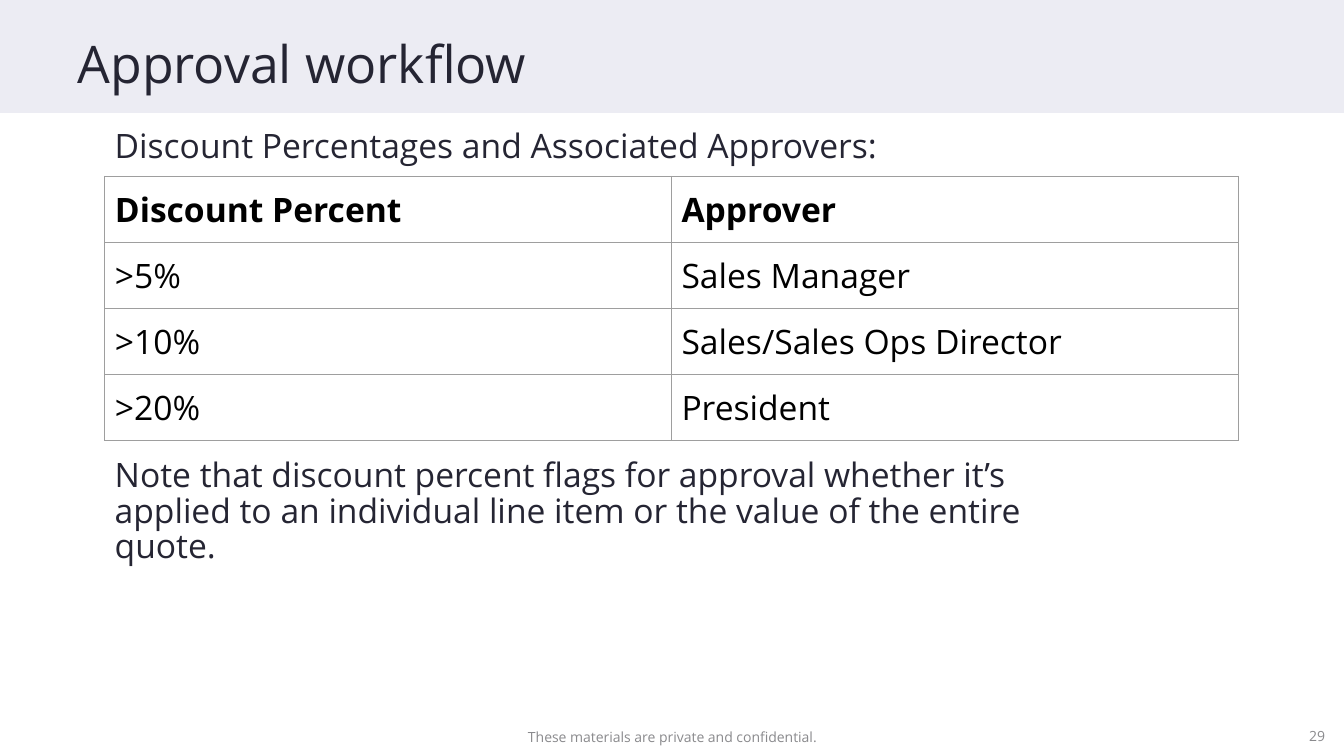
from lxml import etree
from pptx import Presentation
from pptx.dml.color import RGBColor
from pptx.enum.shapes import MSO_SHAPE
from pptx.enum.text import MSO_ANCHOR, MSO_AUTO_SIZE, PP_ALIGN
from pptx.oxml.ns import qn
from pptx.util import Inches, Pt

RECTANGLE = MSO_SHAPE.RECTANGLE
TOP, MIDDLE = MSO_ANCHOR.TOP, MSO_ANCHOR.MIDDLE
LEFT, CENTER, RIGHT = PP_ALIGN.LEFT, PP_ALIGN.CENTER, PP_ALIGN.RIGHT
NO_AUTOFIT = MSO_AUTO_SIZE.NONE
TITLE_ONLY = 5

APPROVERS = [
    ("Discount Percent", "Approver"),
    (">5%", "Sales Manager"),
    (">10%", "Sales/Sales Ops Director"),
    (">20%", "President"),
]


def rgb(hex_code):
    return RGBColor.from_string(hex_code)


class SlideBuilder:
    """Holds the style and the slide; boxes are in percent of the slide's size."""

    FONT = "Open Sans"
    INK, GREY, BLACK = "252533", "8A8A8D", "000000"
    BAND, RULE = "E4E4EE", "9E9E9E"
    TITLE_SIZE, BODY_SIZE, FOOTER_SIZE = 37, 24, 10
    BODY_SPACING = 0.88

    def __init__(self, presentation):
        self.width = presentation.slide_width
        self.height = presentation.slide_height
        layout = presentation.slide_layouts[TITLE_ONLY]
        self.slide = presentation.slides.add_slide(layout)
        self.shapes = self.slide.shapes

    def box(self, left, top, width, height):
        return (round(left * self.width / 100), round(top * self.height / 100),
                round(width * self.width / 100), round(height * self.height / 100))

    def set_text(self, frame, wording, size, color, align=LEFT, bold=False, spacing=1.0):
        frame.text = wording
        paragraph = frame.paragraphs[0]
        paragraph.alignment = align
        paragraph.line_spacing = spacing
        font = paragraph.runs[0].font
        for attribute, value in {"name": self.FONT, "size": Pt(size), "bold": bold}.items():
            setattr(font, attribute, value)
        font.color.rgb = rgb(color)

    def band(self, box, opacity):
        """Draw the tinted header strip behind everything else."""
        header = self.shapes.add_shape(RECTANGLE, *self.box(*box))
        header.shadow.inherit = False
        header.line.fill.background()
        header.fill.solid()
        header.fill.fore_color.rgb = rgb(self.BAND)
        tint = header._element.spPr.find(".//" + qn("a:srgbClr"))
        etree.SubElement(tint, qn("a:alpha"), val=str(opacity * 1000))
        self.shapes._spTree.insert(2, header._element)

    def title(self, wording, box):
        heading = self.shapes.title
        for side, length in zip(("left", "top", "width", "height"), self.box(*box)):
            setattr(heading, side, length)
        frame = heading.text_frame
        frame.auto_size = NO_AUTOFIT
        frame.vertical_anchor = MIDDLE
        self.set_text(frame, wording, self.TITLE_SIZE, self.INK)

    def text(self, wording, box, anchor, **style):
        frame = self.shapes.add_textbox(*self.box(*box)).text_frame
        frame.word_wrap = True
        frame.vertical_anchor = anchor
        self.set_text(frame, wording, **style)

    def body(self, wording, box):
        self.text(wording, box, TOP, size=self.BODY_SIZE, color=self.INK,
                  spacing=self.BODY_SPACING)

    def footer(self, wording, box, align):
        self.text(wording, box, MIDDLE, size=self.FOOTER_SIZE, color=self.GREY, align=align)

    def cell_borders(self, cell):
        properties = cell._tc.get_or_add_tcPr()
        for position, side in enumerate(("lnL", "lnR", "lnT", "lnB")):
            border = etree.Element(qn("a:" + side), w=str(Pt(0.75)))
            fill = etree.SubElement(border, qn("a:solidFill"))
            etree.SubElement(fill, qn("a:srgbClr"), val=self.RULE)
            properties.insert(position, border)

    def table(self, rows, box):
        frame = self.shapes.add_table(len(rows), len(rows[0]), *self.box(*box))
        grid = frame.table
        grid.horz_banding = False
        margins = ("margin_left", "margin_right", "margin_top", "margin_bottom")
        for row_index, row in enumerate(rows):
            for column_index, wording in enumerate(row):
                cell = grid.cell(row_index, column_index)
                for margin in margins:
                    setattr(cell, margin, Inches(0.1))
                cell.fill.background()
                self.cell_borders(cell)
                self.set_text(cell.text_frame, wording, self.BODY_SIZE, self.BLACK,
                              bold=row_index == 0)


def main():
    presentation = Presentation()
    presentation.slide_width = Inches(13.33)
    presentation.slide_height = Inches(7.5)

    builder = SlideBuilder(presentation)
    builder.band((0, 0, 100, 14.93), opacity=70)
    builder.title("Approval workflow", (5.03, 2.8, 90, 10.93))
    builder.footer("These materials are private and confidential.",
                   (34.2, 94.8, 31.65, 5.33), CENTER)
    builder.footer("29", (76, 94.67, 23.33, 5.33), RIGHT)

    content_left, text_width = 7.8, 75.39
    builder.table(APPROVERS, (content_left, 23.33, 84.32, 34.93))
    builder.body("Discount Percentages and Associated Approvers:",
                 (content_left, 16.53, text_width, 6.67))
    builder.body("Note that discount percent flags for approval whether it’s applied to "
                 "an individual line item or the value of the entire quote.",
                 (content_left, 60.13, text_width, 17.47))
    presentation.save("out.pptx")


if __name__ == "__main__":
    main()
